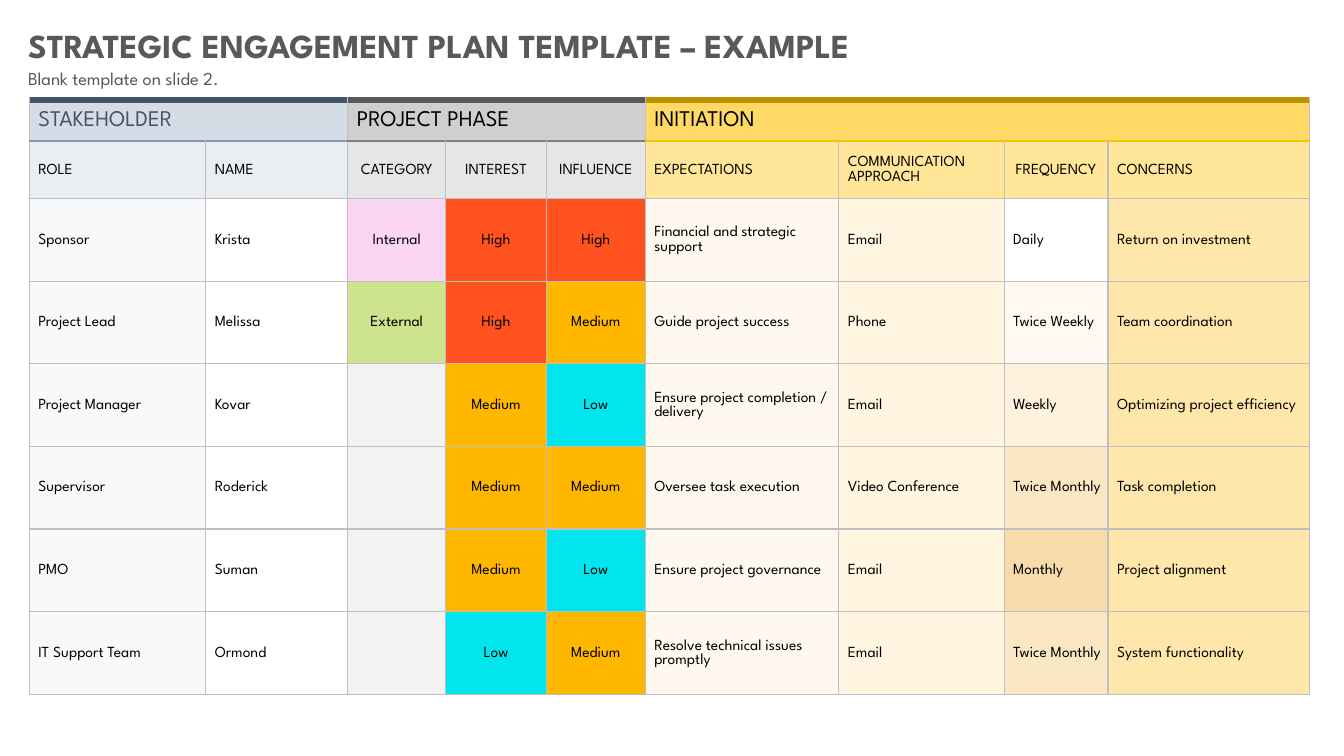
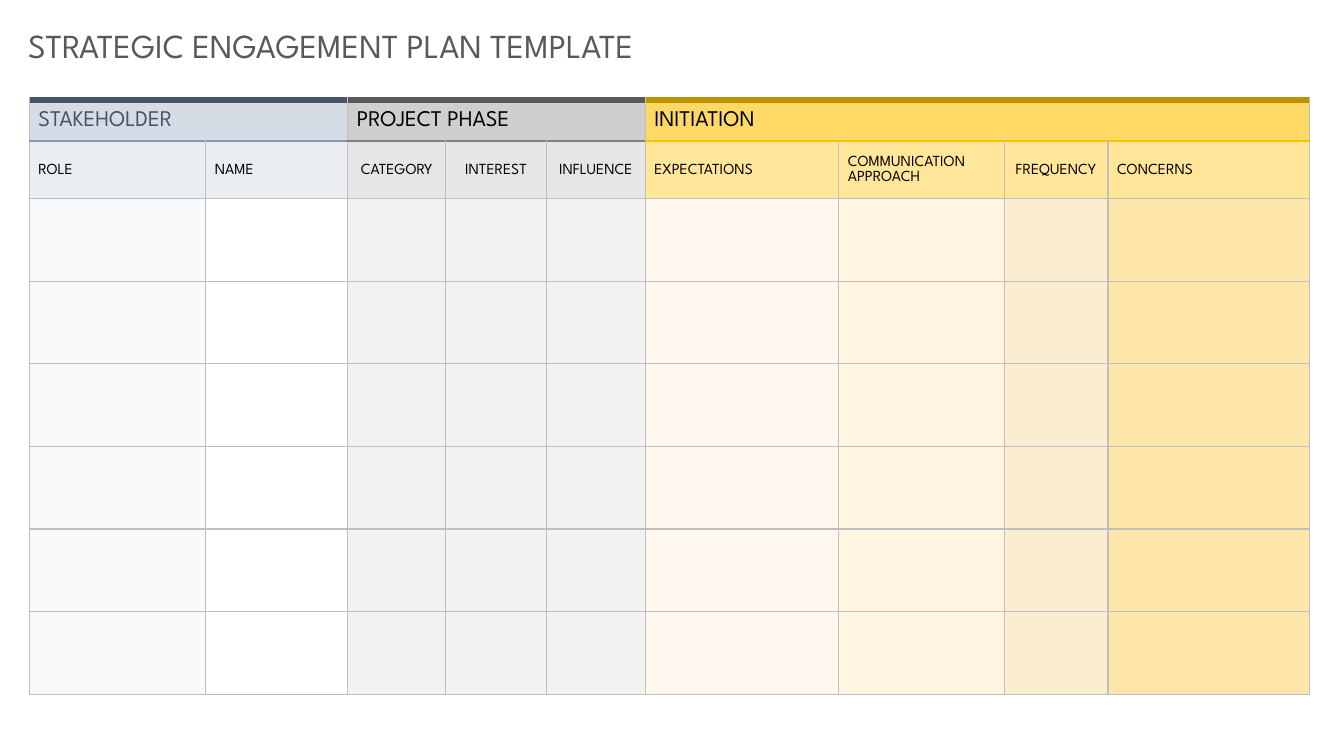
import pptx
import pptx.dml.color
import pptx.enum.text
import pptx.oxml
import pptx.oxml.ns
import pptx.util

Inches = pptx.util.Inches
Pt = pptx.util.Pt
CENTER = pptx.enum.text.PP_ALIGN.CENTER
LEFT = pptx.enum.text.PP_ALIGN.LEFT

COLORS = {
    "title": "595959", "text": "000000", "grid": "BFBFBF",
    "Internal": "FAD6F3", "External": "CEE38D",
    "High": "FF521F", "Medium": "FFB700", "Low": "01E5EC",
    "Daily": "FFFFFF", "Twice Weekly": "FFF9F1", "Weekly": "FEF2DE",
    "Twice Monthly": "F9E8C3", "Monthly": "F7DBAB",
}

GROUPS = [
    {"label": "STAKEHOLDER", "span": 2, "text": "44546A", "fill": "D6DCE5",
     "top": "44546A", "bottom": "8497B0", "subfill": "EAEEF3"},
    {"label": "PROJECT PHASE", "span": 3, "text": "000000", "fill": "D0CECE",
     "top": "595959", "bottom": "808080", "subfill": "E7E6E6"},
    {"label": "INITIATION", "span": 4, "text": "000000", "fill": "FFD966",
     "top": "BF9000", "bottom": "FFC000", "subfill": "FFE699"},
]

COLUMNS = [
    ("ROLE", 1.75, "F7F9FB", LEFT, LEFT),
    ("NAME", 1.41, "FFFFFF", LEFT, LEFT),
    ("CATEGORY", 0.97, "F2F2F2", CENTER, CENTER),
    ("INTEREST", 1, "F2F2F2", CENTER, CENTER),
    ("INFLUENCE", 0.98, "F2F2F2", CENTER, CENTER),
    ("EXPECTATIONS", 1.92, "FEF8EF", LEFT, LEFT),
    ("COMMUNICATION APPROACH", 1.64, "FFF5E1", LEFT, LEFT),
    ("FREQUENCY", 1.03, "FBEDCF", CENTER, LEFT),
    ("CONCERNS", 2, "FFE6AB", LEFT, LEFT),
]

EXAMPLE = [
    ("Sponsor", "Krista", "Internal", "High", "High",
     "Financial and strategic support", "Email", "Daily", "Return on investment"),
    ("Project Lead", "Melissa", "External", "High", "Medium",
     "Guide project success", "Phone", "Twice Weekly", "Team coordination"),
    ("Project Manager", "Kovar", "", "Medium", "Low",
     "Ensure project completion / delivery", "Email", "Weekly",
     "Optimizing project efficiency"),
    ("Supervisor", "Roderick", "", "Medium", "Medium",
     "Oversee task execution", "Video Conference", "Twice Monthly", "Task completion"),
    ("PMO", "Suman", "", "Medium", "Low",
     "Ensure project governance", "Email", "Monthly", "Project alignment"),
    ("IT Support Team", "Ormond", "", "Low", "Medium",
     "Resolve technical issues promptly", "Email", "Twice Monthly",
     "System functionality"),
]
BLANK = [("",) * len(COLUMNS)] * len(EXAMPLE)

ROW_HEIGHTS = [0.41, 0.57] + [0.82] * len(EXAMPLE)


class Deck:
    font = "League Spartan"

    def __init__(self):
        self.prs = pptx.Presentation()
        self.prs.slide_width = Inches(13.33)
        self.prs.slide_height = Inches(7.5)
        self.s = None

    def slide(self):
        self.s = self.prs.slides.add_slide(self.prs.slide_layouts[6])

    def format(self, p, size, color, bold=False):
        for r in p.runs:
            r.font.name = self.font
            r.font.size = Pt(size)
            r.font.bold = bold
            r.font.color.rgb = pptx.dml.color.RGBColor.from_string(color)

    def text(self, text, top, width, height, size, bold=False):
        sp = self.s.shapes.add_textbox(
            Inches(0.18), Inches(top), Inches(width), Inches(height))
        tf = sp.text_frame
        tf.word_wrap = True
        tf.auto_size = pptx.enum.text.MSO_AUTO_SIZE.SHAPE_TO_FIT_TEXT
        tf.text = text
        self.format(tf.paragraphs[0], size, COLORS["title"], bold)

    def title(self, text, bold=False):
        self.text(text, 0.2, 9.13, 0.5, 24, bold)

    def subtitle(self, text):
        self.text(text, 0.62, 4.63, 0.32, 13)

    def border(self, cell, side, color, width):
        ln = pptx.oxml.parse_xml(
            f'<a:ln{side} {pptx.oxml.ns.nsdecls("a")} w="{Pt(width)}">'
            f'<a:solidFill><a:srgbClr val="{color}"/></a:solidFill>'
            f'<a:prstDash val="solid"/></a:ln{side}>')
        cell._tc.get_or_add_tcPr().append(ln)

    def cell(self, cell, text, fill, size=11, color=COLORS["text"], align=LEFT,
             top=(COLORS["grid"], 1), bottom=(COLORS["grid"], 1)):
        grid = (COLORS["grid"], 1)
        for side, line in (("L", grid), ("R", grid), ("T", top), ("B", bottom)):
            self.border(cell, side, *line)
        cell.fill.solid()
        cell.fill.fore_color.rgb = pptx.dml.color.RGBColor.from_string(fill)
        cell.vertical_anchor = pptx.enum.text.MSO_ANCHOR.MIDDLE
        cell.margin_left = Inches(0.01 if align == CENTER else 0.09)
        cell.margin_top = cell.margin_right = Inches(0.01)
        cell.margin_bottom = 0
        p = cell.text_frame.paragraphs[0]
        p.text = text
        p.alignment = align
        self.format(p, size, color)

    def plan(self, rows):
        widths = [column[1] for column in COLUMNS]
        table = self.s.shapes.add_table(
            len(ROW_HEIGHTS), len(COLUMNS), Inches(0.29), Inches(0.99),
            Inches(sum(widths)), Inches(sum(ROW_HEIGHTS))).table
        table.first_row = table.horz_banding = False
        for column, width in zip(table.columns, widths):
            column.width = Inches(width)
        for row, height in zip(table.rows, ROW_HEIGHTS):
            row.height = Inches(height)
        self.headings(table)
        for i, row in enumerate(rows, 2):
            for j, (text, column) in enumerate(zip(row, COLUMNS)):
                self.cell(table.cell(i, j), text, COLORS.get(text, column[2]),
                          align=column[4])

    def headings(self, table):
        first = 0
        for group in GROUPS:
            last = first + group["span"] - 1
            rule = (group["bottom"], 2.25)
            table.cell(0, first).merge(table.cell(0, last))
            for j in range(first, last + 1):
                self.cell(table.cell(0, j), group["label"] if j == first else "",
                          group["fill"], 16, group["text"],
                          top=(group["top"], 4.5), bottom=rule)
                self.cell(table.cell(1, j), COLUMNS[j][0], group["subfill"],
                          align=COLUMNS[j][3], top=rule)
            first = last + 1


def main():
    deck = Deck()
    deck.slide()
    deck.title("STRATEGIC ENGAGEMENT PLAN TEMPLATE – EXAMPLE", bold=True)
    deck.plan(EXAMPLE)
    deck.subtitle("Blank template on slide 2.")
    deck.slide()
    deck.title("STRATEGIC ENGAGEMENT PLAN TEMPLATE")
    deck.plan(BLANK)
    deck.prs.save("out.pptx")


if __name__ == "__main__":
    main()
